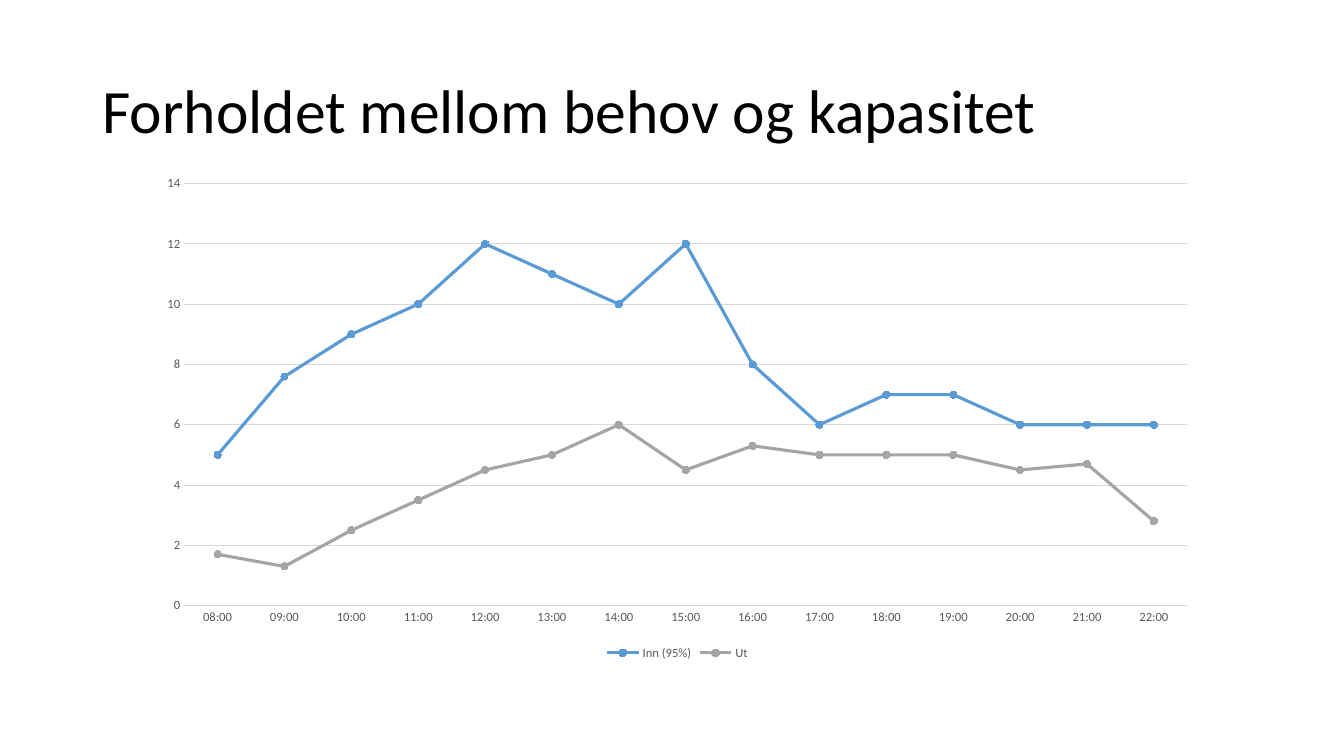
from pptx import Presentation
from pptx.chart.data import CategoryChartData
from pptx.dml.color import RGBColor
from pptx.enum.chart import XL_CHART_TYPE, XL_LEGEND_POSITION, XL_MARKER_STYLE, XL_TICK_MARK
from pptx.enum.text import MSO_ANCHOR, MSO_AUTO_SIZE, PP_ALIGN
from pptx.util import Pt

BLACK = RGBColor(0x00, 0x00, 0x00)
TEXT_GREY = RGBColor(0x59, 0x59, 0x59)
GRID_GREY = RGBColor(0xD9, 0xD9, 0xD9)
BLUE = RGBColor(0x5B, 0x9B, 0xD5)
GREY = RGBColor(0xA5, 0xA5, 0xA5)

HOURS = [f"{hour:02d}:00" for hour in range(8, 23)]
FLOWS = [
    ("Inn (95%)", BLUE, [5, 7.6, 9, 10, 12, 11, 10, 12, 8, 6, 7, 7, 6, 6, 6]),
    ("Ut", GREY, [1.7, 1.3, 2.5, 3.5, 4.5, 5, 6, 4.5, 5.3, 5, 5, 5, 4.5, 4.7, 2.8]),
]


def format_font(font, size, color, name="Calibri"):
    font.name = name
    font.size = Pt(size)
    font.color.rgb = color


def write_text(tf, text, size=18, color=BLACK, align=PP_ALIGN.LEFT, spacing=1.0):
    p = tf.paragraphs[0]
    p.alignment = align
    p.line_spacing = spacing
    r = p.add_run()
    r.text = text
    format_font(r.font, size, color)


def format_line(line, color, width):
    line.color.rgb = color
    line.width = Pt(width)


class SlideBuilder:
    def __init__(self, prs):
        self.s = prs.slides.add_slide(prs.slide_layouts[5])
        self.title_size = 44
        self.label_size = 9
        self.line_width = 2.25
        self.rule_width = 0.75
        self.marker_size = 5

    def title(self, text, left, top, width, height):
        sp = self.s.shapes.title
        sp.left, sp.top, sp.width, sp.height = Pt(left), Pt(top), Pt(width), Pt(height)
        tf = sp.text_frame
        tf.word_wrap = True
        tf.auto_size = MSO_AUTO_SIZE.NONE
        tf.vertical_anchor = MSO_ANCHOR.MIDDLE
        write_text(tf, text, size=self.title_size, spacing=0.9)

    def line_chart(self, categories, flows, left, top, width, height):
        data = CategoryChartData()
        data.categories = categories
        for name, _, values in flows:
            data.add_series(name, values)
        chart = self.s.shapes.add_chart(
            XL_CHART_TYPE.LINE_MARKERS, Pt(left), Pt(top), Pt(width), Pt(height), data
        ).chart
        chart.has_title = False
        format_font(chart.font, 10, BLACK)
        chart.plots[0].vary_by_categories = False
        for series, (_, color, _) in zip(chart.plots[0].series, flows):
            self.style_series(series, color)
        self.style_axes(chart)
        chart.has_legend = True
        chart.legend.position = XL_LEGEND_POSITION.BOTTOM
        chart.legend.include_in_layout = False
        format_font(chart.legend.font, self.label_size, TEXT_GREY)

    def style_series(self, series, color):
        series.smooth = False
        format_line(series.format.line, color, self.line_width)
        marker = series.marker
        marker.style = XL_MARKER_STYLE.CIRCLE
        marker.size = self.marker_size
        marker.format.fill.solid()
        marker.format.fill.fore_color.rgb = color
        format_line(marker.format.line, color, self.rule_width)

    def style_axes(self, chart):
        for axis in (chart.category_axis, chart.value_axis):
            axis.major_tick_mark = XL_TICK_MARK.NONE
            axis.minor_tick_mark = XL_TICK_MARK.NONE
            format_font(axis.tick_labels.font, self.label_size, TEXT_GREY)
        format_line(chart.category_axis.format.line, GRID_GREY, self.rule_width)
        values = chart.value_axis
        values.minimum_scale, values.maximum_scale, values.major_unit = 0, 14, 2
        values.format.line.fill.background()
        values.has_major_gridlines = True
        format_line(values.major_gridlines.format.line, GRID_GREY, self.rule_width)


def main():
    prs = Presentation()
    prs.slide_width, prs.slide_height = Pt(960), Pt(540)
    slide = SlideBuilder(prs)
    slide.title("Forholdet mellom behov og kapasitet", 66, 28.75, 828, 104.4)
    slide.line_chart(HOURS, FLOWS, 104.4, 118.8, 758.9, 355.7)
    prs.save("out.pptx")


if __name__ == "__main__":
    main()
